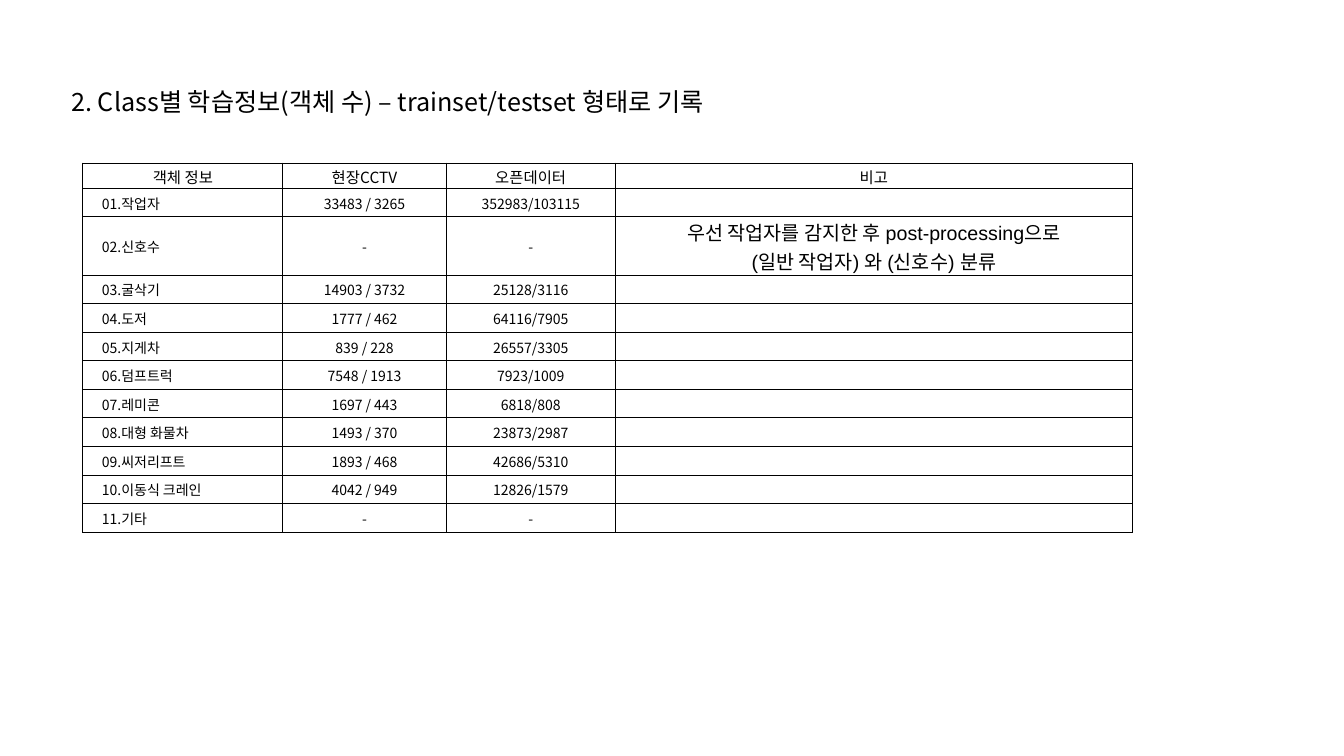
from lxml.etree import SubElement
from pptx import Presentation
from pptx.dml.color import RGBColor
from pptx.enum.text import MSO_ANCHOR, PP_ALIGN
from pptx.oxml.ns import qn
from pptx.util import Cm, Pt

TITLE = "2. Class별 학습정보(객체 수) – trainset/testset 형태로 기록"
HEADERS = ["객체 정보", "현장CCTV", "오픈데이터", "비고"]
NOTE = "우선 작업자를 감지한 후 post-processing으로\n(일반 작업자) 와 (신호수) 분류"
CLASSES = [
    ("작업자", "33483 / 3265", "352983/103115", ""),
    ("신호수", "-", "-", NOTE),
    ("굴삭기", "14903 / 3732", "25128/3116", ""),
    ("도저", "1777 / 462", "64116/7905", ""),
    ("지게차", "839 / 228", "26557/3305", ""),
    ("덤프트럭", "7548 / 1913", "7923/1009", ""),
    ("레미콘", "1697 / 443", "6818/808", ""),
    ("대형 화물차", "1493 / 370", "23873/2987", ""),
    ("씨저리프트", "1893 / 468", "42686/5310", ""),
    ("이동식 크레인", "4042 / 949", "12826/1579", ""),
    ("기타", "-", "-", ""),
]
COLORS = {"text": "000000", "border": "000000"}
KOREAN_FONT = "Noto Sans CJK KR"
TITLE_STYLE = {"size": Pt(18), "name": KOREAN_FONT}
HEADER_STYLE = {"size": Pt(11), "name": KOREAN_FONT}
BODY_STYLE = {"size": Pt(10), "name": KOREAN_FONT}
NOTE_STYLE = {"size": Pt(14), "name": "Arial"}
COLUMN_WIDTHS = [5.04, 4.11, 4.27, 13.03]
HEADER_HEIGHT, BODY_HEIGHT, NOTE_HEIGHT = 0.63, 0.72, 1.46
CELL_FORMAT = {
    "margin_left": Cm(0.03),
    "margin_top": Cm(0.03),
    "margin_right": Cm(0.03),
    "margin_bottom": Cm(0),
    "vertical_anchor": MSO_ANCHOR.MIDDLE,
}
NAME_INDENT = Cm(0.48)


def apply(target, values):
    for name, value in values.items():
        setattr(target, name, value)


def write(text_frame, text, style, alignment):
    text_frame.text = text
    for paragraph in text_frame.paragraphs:
        paragraph.alignment = alignment
        for run in paragraph.runs:
            apply(run.font, style)
            run.font.color.rgb = RGBColor.from_string(COLORS["text"])
            SubElement(run.font._element, qn("a:ea"), typeface=KOREAN_FONT)
        if not paragraph.runs:
            # The size of an empty paragraph would otherwise stretch its row.
            size = str(int(style["size"].pt * 100))
            SubElement(paragraph._p, qn("a:endParaRPr"), sz=size)


def add_borders(cell):
    properties = cell._tc.get_or_add_tcPr()
    for position, side in enumerate(("lnL", "lnR", "lnT", "lnB")):
        line = SubElement(properties, qn(f"a:{side}"), w=str(Pt(0.75)))
        fill = SubElement(line, qn("a:solidFill"))
        SubElement(fill, qn("a:srgbClr"), val=COLORS["border"])
        properties.insert(position, line)


def add_title(slide):
    box = slide.shapes.add_textbox(Cm(1.55), Cm(2.06), Cm(19.84), Cm(1.02))
    box.text_frame.word_wrap = True
    write(box.text_frame, TITLE, TITLE_STYLE, PP_ALIGN.LEFT)


def add_class_table(slide):
    rows = [HEADERS] + [
        (f"{number:02}.{name}", *values)
        for number, (name, *values) in enumerate(CLASSES, 1)
    ]
    heights = [HEADER_HEIGHT] + [
        NOTE_HEIGHT if note else BODY_HEIGHT for *_, note in CLASSES
    ]
    frame = slide.shapes.add_table(
        len(rows), len(HEADERS), Cm(2.09), Cm(4.11),
        Cm(sum(COLUMN_WIDTHS)), Cm(sum(heights)),
    )
    table = frame.table
    table.first_row = table.horz_banding = False
    for column, width in zip(table.columns, COLUMN_WIDTHS):
        column.width = Cm(width)
    for row_index, (values, height) in enumerate(zip(rows, heights)):
        table.rows[row_index].height = Cm(height)
        for column_index, value in enumerate(values):
            cell = table.cell(row_index, column_index)
            apply(cell, CELL_FORMAT)
            cell.fill.background()
            add_borders(cell)
            style, alignment = BODY_STYLE, PP_ALIGN.CENTER
            if row_index == 0:
                style = HEADER_STYLE
            elif column_index == 0:
                alignment = PP_ALIGN.LEFT
                cell.margin_left = NAME_INDENT
            elif value == NOTE:
                style = NOTE_STYLE
            write(cell.text_frame, value, style, alignment)


def main():
    presentation = Presentation()
    presentation.slide_width = Cm(33.87)
    presentation.slide_height = Cm(19.05)
    slide = presentation.slides.add_slide(presentation.slide_layouts[6])
    add_class_table(slide)
    add_title(slide)
    presentation.save("out.pptx")


if __name__ == "__main__":
    main()
